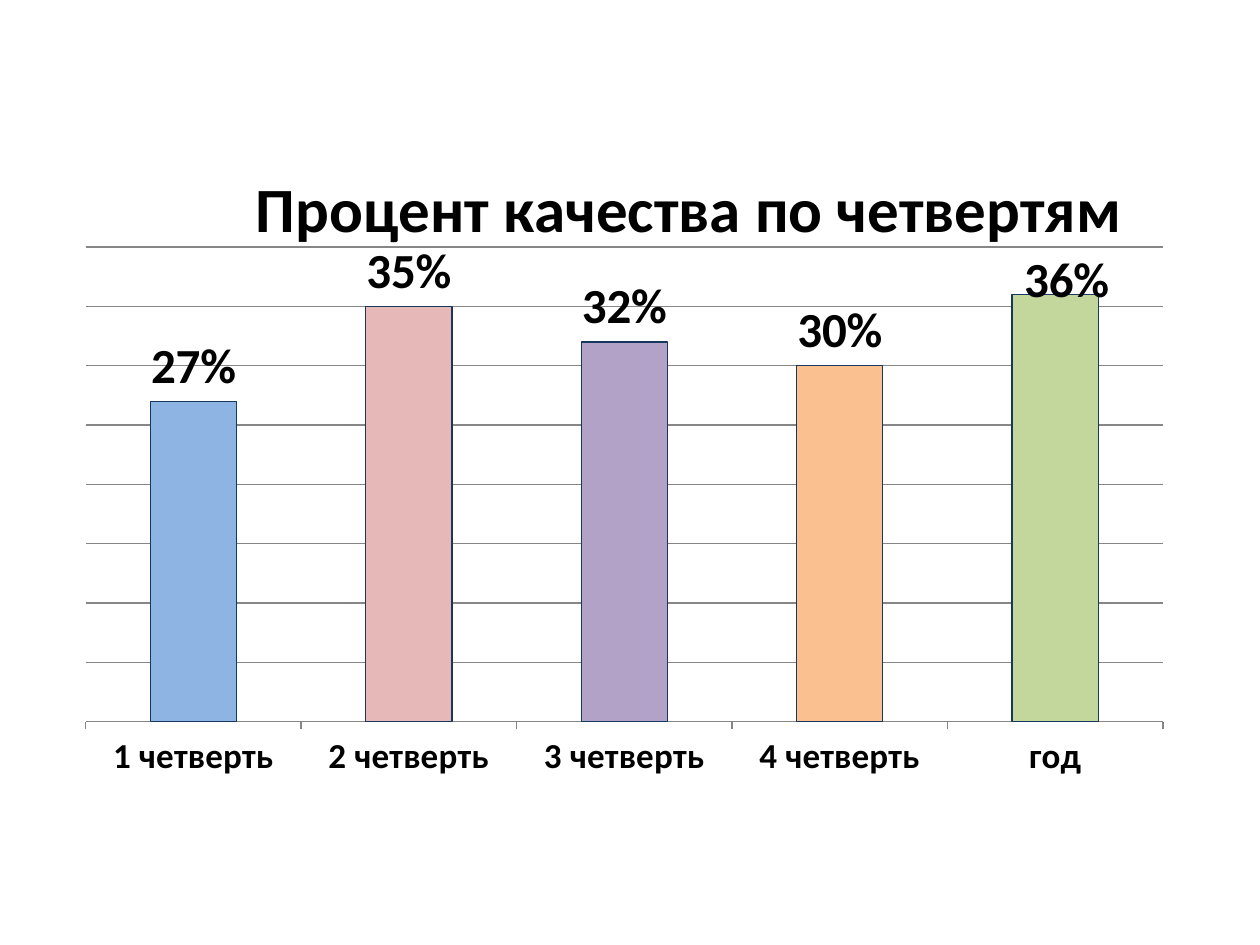
import dataclasses

import pptx
import pptx.chart.data
import pptx.dml.color
import pptx.enum.chart
import pptx.oxml
import pptx.oxml.ns
import pptx.util

Inches = pptx.util.Inches
Pt = pptx.util.Pt
RGB = pptx.dml.color.RGBColor

FONT = "Calibri"
BLACK = RGB(0x00, 0x00, 0x00)
GREY = RGB(0x86, 0x86, 0x86)
NAVY = RGB(0x17, 0x37, 0x5E)
CYAN = RGB(0x00, 0xB0, 0xF0)
BLUE = RGB(0x8E, 0xB4, 0xE3)
PINK = RGB(0xE6, 0xB9, 0xB8)
PURPLE = RGB(0xB3, 0xA2, 0xC7)
ORANGE = RGB(0xFA, 0xC0, 0x90)
GREEN = RGB(0xC3, 0xD6, 0x9B)


@dataclasses.dataclass
class Bar:
    name: str
    value: float
    color: RGB
    shift: tuple[float, float] | None = None  # label offset, share of chart


BARS = [
    Bar("1 четверть", 0.27, BLUE),
    Bar("2 четверть", 0.35, PINK),
    Bar("3 четверть", 0.32, PURPLE),
    Bar("4 четверть", 0.30, ORANGE),
    Bar("год", 0.36, GREEN, (0.01, 0.03)),
]


def style(font, size: int) -> None:
    font.name = FONT
    font.size = Pt(size)
    font.bold = True
    font.color.rgb = BLACK


def place(owner, index: int, **parts: object) -> None:
    """Give a chart part a manual layout."""
    for old in owner.findall(pptx.oxml.ns.qn("c:layout")):
        owner.remove(old)
    body = "".join(f'<c:{key} val="{val}"/>' for key, val in parts.items())
    owner.insert(index, pptx.oxml.parse_xml(
        f'<c:layout {pptx.oxml.ns.nsdecls("c")}>'
        f"<c:manualLayout>{body}</c:manualLayout></c:layout>"))


def add_title(chart, text: str) -> None:
    chart.has_title = True
    para = chart.chart_title.text_frame.paragraphs[0]
    para.text = text
    style(para.font, 36)
    style(para.runs[0].font, 36)
    place(chart.chart_title._element, 1,
          xMode="edge", yMode="edge", x=0.16, y=0.04)


def set_axes(chart) -> None:
    kinds = pptx.enum.chart
    cat = chart.category_axis
    cat.major_tick_mark = kinds.XL_TICK_MARK.OUTSIDE
    cat.format.line.color.rgb = GREY
    style(cat.tick_labels.font, 20)
    val = chart.value_axis
    val.visible = False
    val.minimum_scale, val.maximum_scale, val.major_unit = 0, 0.4, 0.05
    val.tick_labels.number_format = "0%"
    val.tick_labels.number_format_is_linked = False
    val.has_major_gridlines = True
    val.major_gridlines.format.line.color.rgb = GREY


def paint(part, color: RGB) -> None:
    part.format.fill.solid()
    part.format.fill.fore_color.rgb = color
    part.format.line.color.rgb = NAVY
    part.format.line.width = Pt(0.75)


def set_bars(plot) -> None:
    plot.gap_width = 150
    plot.vary_by_categories = False
    series = plot.series[0]
    paint(series, CYAN)
    labels = series.data_labels
    labels.show_value = True
    labels.number_format = "0%"
    labels.number_format_is_linked = False
    labels.position = pptx.enum.chart.XL_LABEL_POSITION.OUTSIDE_END
    style(labels.font, 28)
    for i, bar in enumerate(BARS):
        point = series.points[i]
        paint(point, bar.color)
        if bar.shift:
            label = point.data_label
            style(label.font, 28)
            label.position = labels.position
            x, y = bar.shift
            place(label._dLbl, 1, x=x, y=y)


def main() -> None:
    deck = pptx.Presentation()
    deck.slide_width, deck.slide_height = Inches(10), Inches(7.5)
    slide = deck.slides.add_slide(deck.slide_layouts[6])

    # Chart and its data
    data = pptx.chart.data.CategoryChartData(number_format="0%")
    data.categories = [bar.name for bar in BARS]
    data.add_series("Series 1", [bar.value for bar in BARS])
    chart = slide.shapes.add_chart(
        pptx.enum.chart.XL_CHART_TYPE.COLUMN_CLUSTERED,
        Inches(0.5), Inches(0.99), Inches(9), Inches(5.71), data).chart
    chart.has_legend = False
    chart.font.name = FONT
    chart.font.size = Pt(10)
    chart.font.color.rgb = BLACK

    # Title, axes, bars
    add_title(chart, "Процент качества по четвертям")
    set_axes(chart)
    set_bars(chart.plots[0])

    # Plot area
    area = chart._chartSpace.chart.plotArea
    place(area, 0, layoutTarget="inner", xMode="edge", yMode="edge",
          x=0.02, y=0.17, w=0.95, h=0.66)

    deck.save("out.pptx")


if __name__ == "__main__":
    main()
